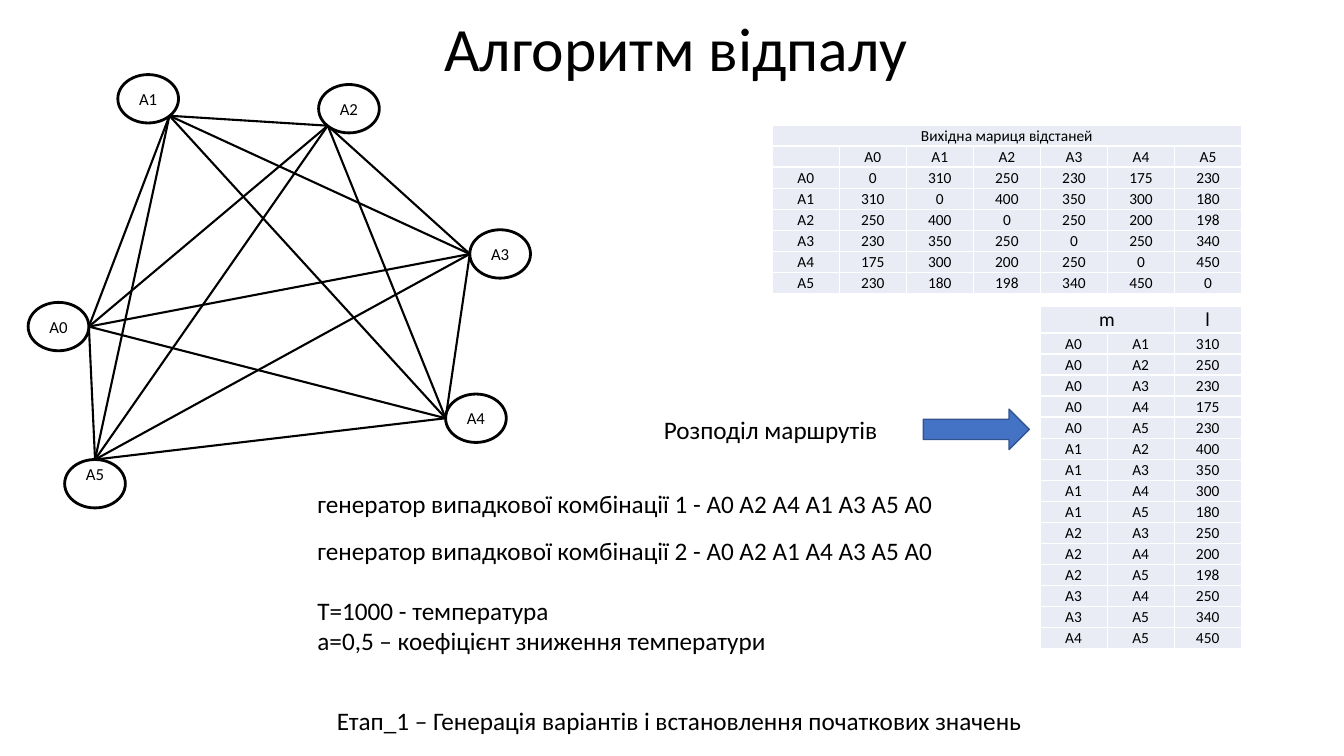
from dataclasses import dataclass
from itertools import combinations

from lxml import etree
from pptx import Presentation
from pptx.dml.color import RGBColor
from pptx.enum.shapes import MSO_CONNECTOR, MSO_SHAPE
from pptx.enum.text import MSO_ANCHOR, PP_ALIGN
from pptx.oxml.ns import qn
from pptx.util import Cm, Pt

STRAIGHT = MSO_CONNECTOR.STRAIGHT
NODE = MSO_SHAPE.FLOWCHART_CONNECTOR
RIGHT_ARROW = MSO_SHAPE.RIGHT_ARROW
MIDDLE = MSO_ANCHOR.MIDDLE
LEFT, CENTER = PP_ALIGN.LEFT, PP_ALIGN.CENTER


@dataclass(frozen=True)
class Theme:
    font: str = "Calibri"
    ink: str = "000000"
    cell: str = "E9EBF5"
    border: str = "FFFFFF"
    arrow: str = "4472C4"
    arrow_line: str = "325491"
    title_size: int = 44
    body_size: int = 18
    head_size: int = 14
    node_size: int = 12
    cell_size: int = 11


THEME = Theme()

# Graph nodes: left and top in cm, and the point of the oval where edges meet,
# as fractions of its width and height
NODE_WIDTH, NODE_HEIGHT = 1.53, 1.22
NEAR, FAR = 0.15, 0.85
NODES = {
    "A0": (0.71, 7.62, 1, 0.5),
    "A1": (2.97, 1.88, FAR, FAR),
    "A2": (8.03, 2.13, NEAR, FAR),
    "A3": (11.84, 5.79, 0, 0.5),
    "A4": (11.23, 9.93, 0, 0.5),
    "A5": (1.63, 11.58, 0.5, 0),
}
DISTANCES = [
    [0, 310, 250, 230, 175, 230],
    [310, 0, 400, 350, 300, 180],
    [250, 400, 0, 250, 200, 198],
    [230, 350, 250, 0, 250, 340],
    [175, 300, 200, 250, 0, 450],
    [230, 180, 198, 340, 450, 0],
]
COLUMN_WIDTH, ROW_HEIGHT, HEAD_HEIGHT = 1.69, 0.53, 0.67


def color(value):
    return RGBColor.from_string(value)


def add_run(paragraph, text, size, align=LEFT):
    paragraph.alignment = align
    run = paragraph.add_run()
    run.text = text
    run.font.name = THEME.font
    run.font.size = Pt(size)
    run.font.bold = False
    run.font.color.rgb = color(THEME.ink)


def add_title(slide, text):
    title = slide.shapes.title
    title.left, title.top, title.width, title.height = Cm(0.23), Cm(0.08), Cm(33.63), Cm(2.46)
    title.text_frame.vertical_anchor = MIDDLE
    paragraph = title.text_frame.paragraphs[0]
    paragraph.line_spacing = 0.9
    add_run(paragraph, text, THEME.title_size, CENTER)


def add_text(slide, left, top, width, lines, align=LEFT):
    height = 0.25 + 0.77 * len(lines)
    box = slide.shapes.add_textbox(Cm(left), Cm(top), Cm(width), Cm(height))
    frame = box.text_frame
    frame.word_wrap = True
    for index, line in enumerate(lines):
        paragraph = frame.add_paragraph() if index else frame.paragraphs[0]
        add_run(paragraph, line, THEME.body_size, align)


def add_node(group, name, bottom_inset=0):
    left, top = NODES[name][:2]
    shape = group.shapes.add_shape(NODE, Cm(left), Cm(top), Cm(NODE_WIDTH), Cm(NODE_HEIGHT))
    shape.shadow.inherit = False
    shape.fill.background()
    shape.line.color.rgb = color(THEME.ink)
    shape.line.width = Pt(2)
    frame = shape.text_frame
    frame.margin_left = frame.margin_right = frame.margin_top = 0
    frame.margin_bottom = Cm(bottom_inset)
    frame.vertical_anchor = MIDDLE
    add_run(frame.paragraphs[0], name, THEME.node_size, CENTER)


def edge_point(name):
    left, top, across, down = NODES[name]
    return Cm(left + across * NODE_WIDTH), Cm(top + down * NODE_HEIGHT)


def add_edge(group, start, end):
    edge = group.shapes.add_connector(STRAIGHT, *edge_point(start), *edge_point(end))
    edge.line.color.rgb = color(THEME.ink)
    edge.line.width = Pt(1.5)
    etree.SubElement(edge._element.spPr, qn("a:effectLst"))


def add_graph(slide):
    group = slide.shapes.add_group_shape()
    for name in NODES:
        add_node(group, name, 0.51 if name == "A5" else 0)
    for start, end in combinations(NODES, 2):
        add_edge(group, start, end)


def add_borders(cell):
    properties = cell._tc.get_or_add_tcPr()
    for side in ("a:lnL", "a:lnR", "a:lnT", "a:lnB"):
        line = etree.SubElement(properties, qn(side), w=str(Pt(1)))
        fill = etree.SubElement(line, qn("a:solidFill"))
        etree.SubElement(fill, qn("a:srgbClr"), val=THEME.border)


def format_cell(cell, text, size):
    add_borders(cell)
    cell.fill.solid()
    cell.fill.fore_color.rgb = color(THEME.cell)
    cell.vertical_anchor = MIDDLE
    cell.margin_left = cell.margin_right = cell.margin_top = Cm(0.02)
    cell.margin_bottom = 0
    paragraph = cell.text_frame.paragraphs[0]
    if text:
        add_run(paragraph, text, size, CENTER)
    else:
        # Empty cells need a small type size, or they stretch the row
        etree.SubElement(paragraph._p, qn("a:endParaRPr"), sz=str(size * 100))


def add_grid(slide, left, top, rows, head_span, head_size, head_height):
    columns = len(rows[0])
    heights = [head_height] + [ROW_HEIGHT] * (len(rows) - 1)
    frame = slide.shapes.add_table(len(rows), columns, Cm(left), Cm(top),
                                   Cm(COLUMN_WIDTH * columns), Cm(sum(heights)))
    table = frame.table
    table.first_row = table.horz_banding = False
    for column in table.columns:
        column.width = Cm(COLUMN_WIDTH)
    for row_index, values in enumerate(rows):
        table.rows[row_index].height = Cm(heights[row_index])
        size = THEME.cell_size if row_index else head_size
        for column_index, value in enumerate(values):
            format_cell(table.cell(row_index, column_index), str(value), size)
    table.cell(0, 0).merge(table.cell(0, head_span - 1))


def add_arrow(slide):
    arrow = slide.shapes.add_shape(RIGHT_ARROW, Cm(23.27), Cm(10.31), Cm(2.67), Cm(1.02))
    arrow.shadow.inherit = False
    arrow.fill.solid()
    arrow.fill.fore_color.rgb = color(THEME.arrow)
    arrow.line.color.rgb = color(THEME.arrow_line)
    arrow.line.width = Pt(1)


def main():
    presentation = Presentation()
    presentation.slide_width, presentation.slide_height = Cm(33.87), Cm(19.05)
    slide = presentation.slides.add_slide(presentation.slide_layouts[5])
    add_title(slide, "Алгоритм відпалу")
    add_graph(slide)

    # Distance matrix, and the list of routes taken from it
    names = list(NODES)
    matrix = [["Вихідна мариця відстаней"] + [""] * len(names), [""] + names]
    matrix += [[name] + distances for name, distances in zip(names, DISTANCES)]
    add_grid(slide, 19.46, 3.15, matrix, 7, THEME.cell_size, ROW_HEIGHT)
    routes = [["m", "", "l"]]
    routes += [[names[i], names[j], DISTANCES[i][j]] for i, j in combinations(range(len(names)), 2)]
    add_grid(slide, 26.21, 7.72, routes, 2, THEME.head_size, HEAD_HEIGHT)

    # Captions
    add_text(slide, 16.48, 10.31, 6.17, ["Розподіл маршрутів"])
    add_arrow(slide)
    add_text(slide, 7.75, 12.17, 16.94, ["генератор випадкової комбінації 1 - A0 A2 A4 A1 A3 A5 A0"])
    add_text(slide, 7.75, 13.36, 16.94, ["генератор випадкової комбінації 2 - A0 A2 A1 A4 A3 A5 A0"])
    add_text(slide, 7.75, 14.88, 13.11,
             ["T=1000 - температура", "a=0,5 – коефіцієнт зниження температури"])
    add_text(slide, 7.62, 17.65, 19,
             ["Етап_1 – Генерація варіантів і встановлення початкових значень"], CENTER)
    presentation.save("out.pptx")


if __name__ == "__main__":
    main()
